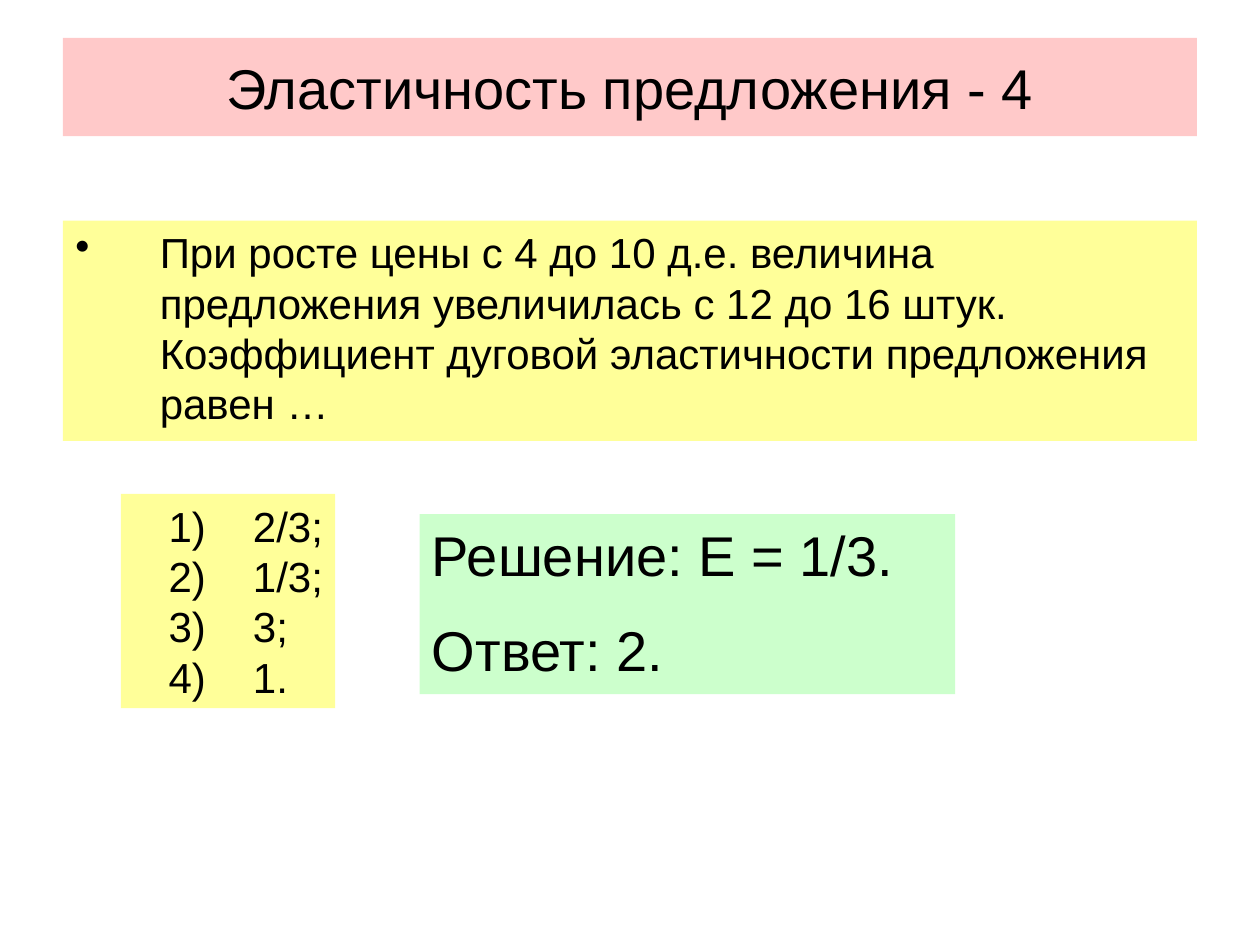
import pptx
import pptx.util
import pptx.dml.color
import pptx.enum.shapes
import pptx.enum.text
import pptx.oxml
import pptx.oxml.ns
import lxml.etree

Inches, Pt = pptx.util.Inches, pptx.util.Pt
RGB = pptx.dml.color.RGBColor
ALIGN = pptx.enum.text.PP_ALIGN
ANCHOR = pptx.enum.text.MSO_ANCHOR
COLORS = {"title": "FF0000", "task": "FFFF99", "answer": "CCFFCC", "text": "000000"}


def add_panel(page, left, top, width, height, color, lines, size,
              align=ALIGN.LEFT, anchor=ANCHOR.TOP):
    """Add a filled rectangle with one paragraph per line of text."""
    box = page.shapes.add_shape(
        pptx.enum.shapes.MSO_SHAPE.RECTANGLE,
        Inches(left), Inches(top), Inches(width), Inches(height))
    box.shadow.inherit = False
    box.fill.solid()
    box.fill.fore_color.rgb = RGB.from_string(COLORS[color])
    box.line.fill.background()
    frame = box.text_frame
    frame.word_wrap = True
    frame.vertical_anchor = anchor
    frame.text = "\n".join(lines)
    for para in frame.paragraphs:
        para.alignment = align
        for span in para.runs:
            span.font.name = "Arial"
            span.font.size = Pt(size)
            span.font.color.rgb = RGB.from_string(COLORS["text"])
    return box


def set_hanging(para, margin, hang):
    """Indent a paragraph, with its first line set back by the hang."""
    properties = para._p.get_or_add_pPr()
    properties.set("marL", str(Inches(margin)))
    properties.set("indent", str(-Inches(hang)))
    return properties


deck = pptx.Presentation()
deck.slide_width, deck.slide_height = Inches(10), Inches(7.5)
page = deck.slides.add_slide(deck.slide_layouts[6])

# Title on a translucent red band
title = add_panel(page, 0.5, 0.3, 9, 0.78, "title", ["Эластичность предложения - 4"],
                  32, ALIGN.CENTER, ANCHOR.MIDDLE)
tint = title.fill._xPr.find(".//" + pptx.oxml.ns.qn("a:srgbClr"))
lxml.etree.SubElement(tint, pptx.oxml.ns.qn("a:alpha")).set("val", "21000")

# Task with a bullet
task = add_panel(page, 0.5, 1.75, 9, 1.75, "task", [
    "При росте цены с 4 до 10 д.е. величина предложения увеличилась с 12 до 16 штук. "
    "Коэффициент дуговой эластичности предложения равен …"], 24)
properties = set_hanging(task.text_frame.paragraphs[0], 0.67, 0.67)
lxml.etree.SubElement(properties, pptx.oxml.ns.qn("a:buChar")).set("char", "•")

# Answer options, numbers and values in two columns
options = add_panel(page, 0.96, 3.92, 1.7, 1.7, "task",
                    ["1)\t2/3;", "2)\t1/3;", "3)\t3;", "4)\t1."], 24, anchor=ANCHOR.MIDDLE)
options.text_frame.margin_right = 0
for para in options.text_frame.paragraphs:
    set_hanging(para, 0.95, 0.67)

# Solution and answer
solution = add_panel(page, 3.33, 4.08, 4.25, 1.43, "answer",
                     ["Решение: Е = 1/3.", "Ответ: 2."], 32)
solution.text_frame.paragraphs[1].space_before = Pt(16)

deck.save("out.pptx")
